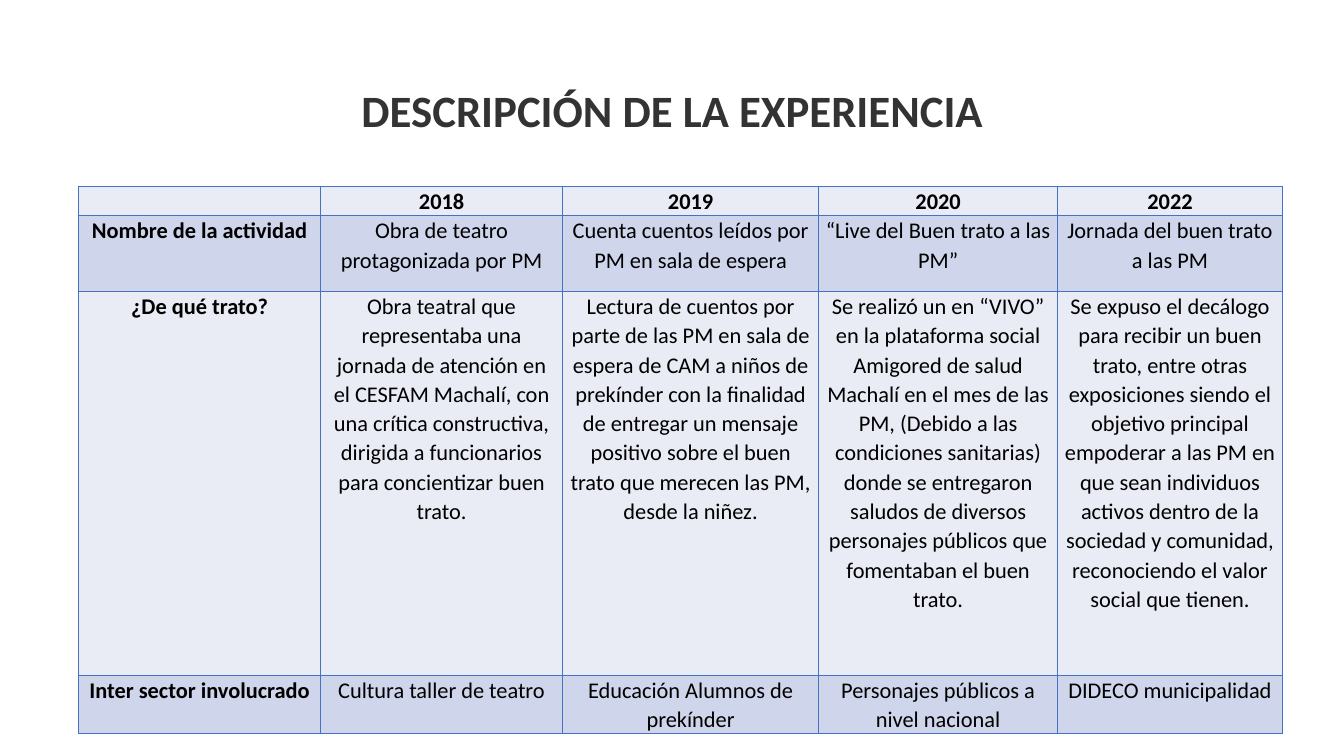
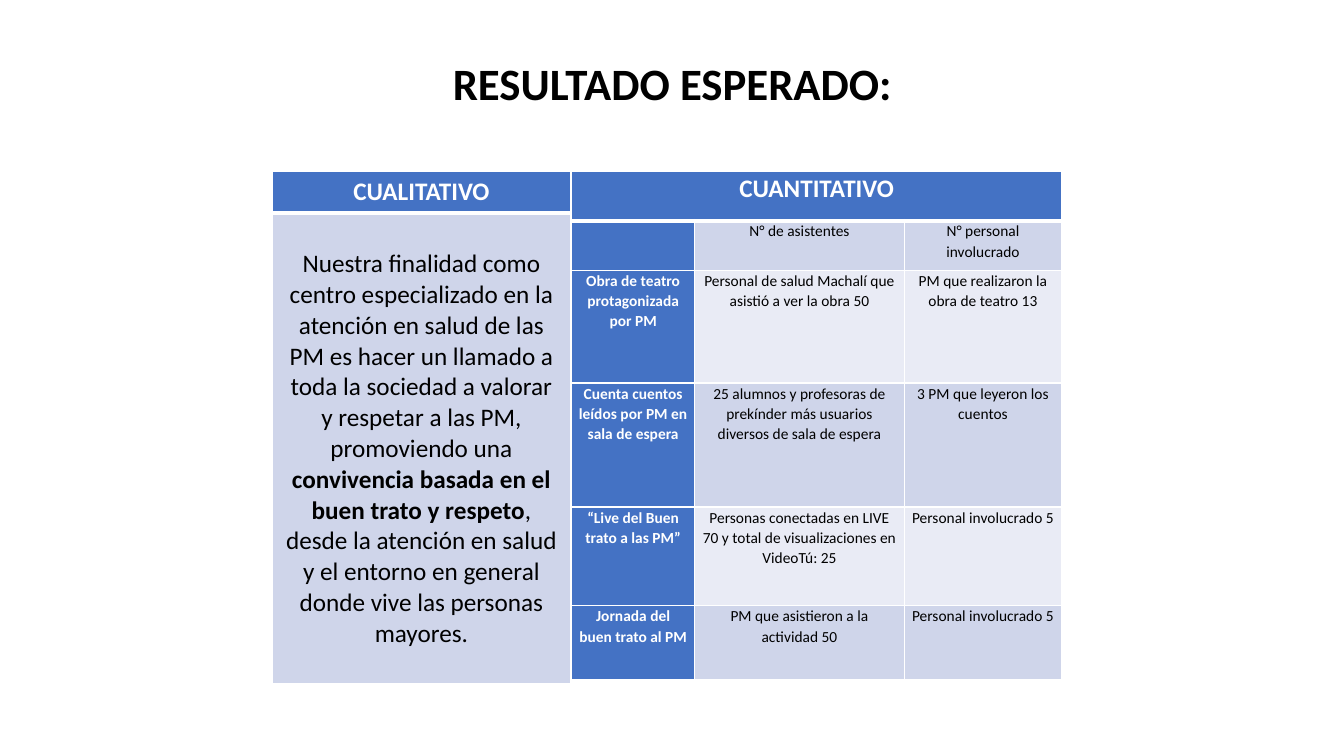
"""Builds two slides with banded tables: the experience and its expected results."""
from dataclasses import dataclass

from lxml.etree import SubElement
from pptx import Presentation
from pptx.dml.color import RGBColor
from pptx.enum.text import MSO_ANCHOR, PP_ALIGN
from pptx.oxml.ns import qn
from pptx.util import Emu, Pt

EMU_PER_PX = 9144
FONT = "Calibri"
BLACK, WHITE, GREY = "000000", "FFFFFF", "333333"
BLUE = "4472C4"
BANDS = ("E9EBF5", "CFD5EA")
MARK = "**"


@dataclass(frozen=True)
class Title:
    text: str
    top: int
    color: str


@dataclass(frozen=True)
class Grid:
    left: int
    top: int
    cols: tuple[int, ...]
    rows: tuple[int, ...]
    texts: tuple[tuple[str, ...], ...]
    head_size: int
    body_size: int
    border: str = WHITE
    accented: bool = True
    key_column: bool = True
    head_rule: int = 3
    margins: tuple[int, int] = (7, 0)
    body_top: int = 0
    line_spacing: float = 1.07
    space_after: int = 8


def px(n: int) -> Emu:
    return Emu(n * EMU_PER_PX)


def rgb(color: str) -> RGBColor:
    return RGBColor.from_string(color)


def set_attrs(target: object, values: dict) -> None:
    for name, value in values.items():
        setattr(target, name, value)


def write(p, text: str, size: int, color: str, bold: bool, **spacing) -> None:
    set_attrs(p, {"alignment": PP_ALIGN.CENTER, **spacing})
    for i, part in enumerate(text.split(MARK)):
        r = p.add_run()
        r.text = part
        set_attrs(r.font, {"name": FONT, "size": Pt(size), "bold": bold or i % 2 == 1})
        r.font.color.rgb = rgb(color)


def add_title(s, title: Title) -> None:
    tf = s.shapes.add_textbox(px(92), px(title.top), px(1150), px(145)).text_frame
    set_attrs(tf, {"word_wrap": True, "vertical_anchor": MSO_ANCHOR.MIDDLE})
    write(tf.paragraphs[0], title.text, 32, title.color, True, line_spacing=0.9)


def set_borders(cell, color: str, widths: dict[str, int]) -> None:
    tc_pr = cell._tc.get_or_add_tcPr()
    for side in "LRTB":
        ln = SubElement(tc_pr, qn(f"a:ln{side}"), w=str(Pt(widths.get(side, 1))))
        SubElement(SubElement(ln, qn("a:solidFill")), qn("a:srgbClr"), val=color)


def fill_cell(cell, grid: Grid, row: int, col: int) -> None:
    is_head = row == 0
    is_key = is_head or (grid.key_column and col == 0)
    is_blue = grid.accented and is_key
    side, edge = grid.margins
    set_attrs(cell, {
        "margin_left": px(side), "margin_right": px(side),
        "margin_top": px(edge if is_head else edge + grid.body_top),
        "margin_bottom": px(edge), "vertical_anchor": MSO_ANCHOR.TOP,
    })
    rule_side = {0: "B", 1: "T"}.get(row)
    set_borders(cell, grid.border, {rule_side: grid.head_rule} if rule_side else {})
    cell.fill.solid()
    cell.fill.fore_color.rgb = rgb(BLUE if is_blue else BANDS[row % 2])
    size = grid.head_size if is_head else grid.body_size
    p = cell.text_frame.paragraphs[0]
    text = grid.texts[row][col]
    if text:
        write(p, text, size, WHITE if is_blue else BLACK, is_key,
              line_spacing=grid.line_spacing, space_after=Pt(grid.space_after))
    else:
        SubElement(p._p, qn("a:endParaRPr"), sz=str(size * 100))


def add_grid(s, grid: Grid):
    table = s.shapes.add_table(
        len(grid.rows), len(grid.cols), px(grid.left), px(grid.top),
        px(sum(grid.cols)), px(sum(grid.rows))).table
    set_attrs(table, {"first_row": False, "horz_banding": False})
    for column, width in zip(table.columns, grid.cols):
        column.width = px(width)
    for row, height in enumerate(grid.rows):
        table.rows[row].height = px(height)
        for col in range(len(grid.cols)):
            fill_cell(table.cell(row, col), grid, row, col)
    return table


ACTIVITIES = Grid(
    left=78, top=185, cols=(240, 240, 254, 237, 223), rows=(29, 75, 381, 58),
    head_size=16, body_size=16, border=BLUE, accented=False, head_rule=1,
    texts=(
        ("", "2018", "2019", "2020", "2022"),
        ("Nombre de la actividad",
         "Obra de teatro protagonizada por PM",
         "Cuenta cuentos leídos por PM en sala de espera",
         "“Live del Buen trato a las PM”",
         "Jornada del buen trato a las PM"),
        ("¿De qué trato?",
         "Obra teatral que representaba una jornada de atención en el CESFAM Machalí, "
         "con una crítica constructiva, dirigida a funcionarios para concientizar buen trato.",
         "Lectura de cuentos por parte de las PM en sala de espera de CAM a niños de "
         "prekínder con la finalidad de entregar un mensaje positivo sobre el buen trato "
         "que merecen las PM, desde la niñez.",
         "Se realizó un en “VIVO” en la plataforma social Amigored de salud Machalí en el "
         "mes de las PM, (Debido a las condiciones sanitarias) donde se entregaron saludos "
         "de diversos personajes públicos que fomentaban el buen trato.",
         "Se expuso el decálogo para recibir un buen trato, entre otras exposiciones siendo "
         "el objetivo principal empoderar a las PM en que sean individuos activos dentro de "
         "la sociedad y comunidad, reconociendo el valor social que tienen."),
        ("Inter sector involucrado",
         "Cultura taller de teatro",
         "Educación Alumnos de prekínder",
         "Personajes públicos a nivel nacional",
         "DIDECO municipalidad"),
    ))

QUALITATIVE = Grid(
    left=270, top=170, cols=(296,), rows=(41, 467), head_size=18, body_size=18,
    key_column=False, margins=(10, 5), body_top=31, line_spacing=1.0, space_after=0,
    texts=(
        ("CUALITATIVO",),
        ("Nuestra finalidad como centro especializado en la atención en salud de las PM es "
         "hacer un llamado a toda la sociedad a valorar y respetar a las PM, promoviendo una "
         "**convivencia basada en el buen trato y respeto**, desde la atención en salud y el "
         "entorno en general donde vive las personas mayores.",),
    ))

QUANTITATIVE = Grid(
    left=567, top=170, cols=(122, 208, 156), rows=(49, 49, 112, 123, 98, 73),
    head_size=18, body_size=11,
    texts=(
        ("CUANTITATIVO", "", ""),
        ("", "N° de asistentes", "N° personal involucrado"),
        ("Obra de teatro protagonizada por PM",
         "Personal de salud Machalí que asistió a ver la obra 50",
         "PM que realizaron la obra de teatro 13"),
        ("Cuenta cuentos leídos por PM en sala de espera",
         "25 alumnos y profesoras de prekínder más usuarios diversos de sala de espera",
         "3 PM que leyeron los cuentos"),
        ("“Live del Buen trato a las PM”",
         "Personas conectadas en LIVE 70 y total de visualizaciones en VideoTú: 25",
         "Personal involucrado 5"),
        ("Jornada del buen trato al PM",
         "PM que asistieron a la actividad 50",
         "Personal involucrado 5"),
    ))


def add_slide(prs, title: Title):
    s = prs.slides.add_slide(prs.slide_layouts[6])
    add_title(s, title)
    return s


def main() -> None:
    prs = Presentation()
    set_attrs(prs, {"slide_width": px(1333), "slide_height": px(750)})
    s = add_slide(prs, Title("DESCRIPCIÓN DE LA EXPERIENCIA", 40, GREY))
    add_grid(s, ACTIVITIES)
    s = add_slide(prs, Title("RESULTADO ESPERADO:", 13, BLACK))
    add_grid(s, QUALITATIVE)
    table = add_grid(s, QUANTITATIVE)
    table.cell(0, 0).merge(table.cell(0, 2))
    prs.save("out.pptx")


if __name__ == "__main__":
    main()
